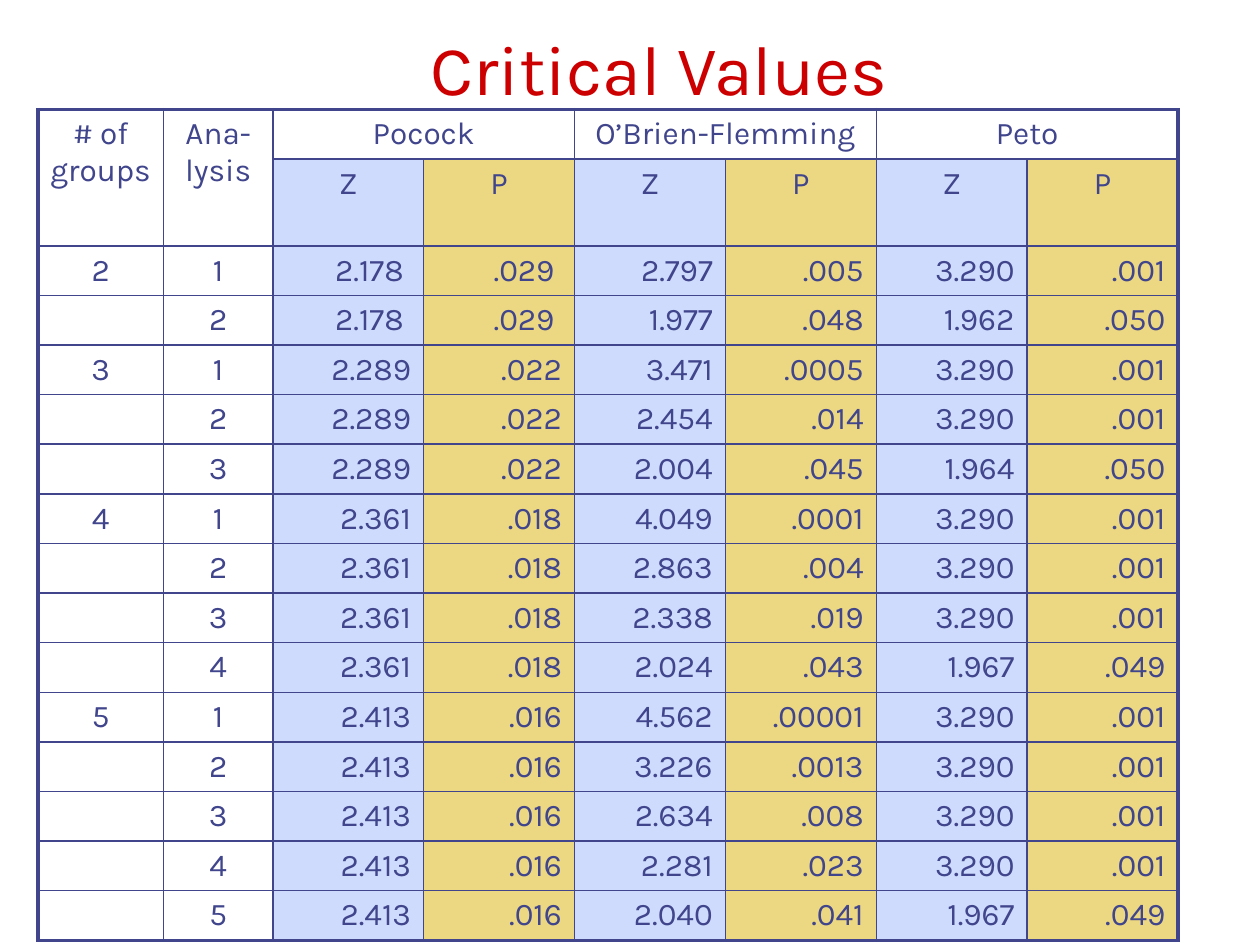
from dataclasses import dataclass

from lxml import etree
from pptx import Presentation
from pptx.dml.color import RGBColor
from pptx.enum.text import MSO_ANCHOR, PP_ALIGN
from pptx.oxml.ns import qn
from pptx.util import Inches, Pt

CENTER, RIGHT = PP_ALIGN.CENTER, PP_ALIGN.RIGHT
BOTTOM = MSO_ANCHOR.BOTTOM
TITLE_ONLY = 5


@dataclass(frozen=True)
class Theme:
    """Colours, font, type sizes and line widths of the slide."""
    font: str = "Karla"
    title: str = "CC0000"
    ink: str = "40458C"
    z_fill: str = "CFDBFD"
    p_fill: str = "ECD882"
    title_size: float = 40
    cell_size: float = 18
    inner_line: float = 1
    outer_line: float = 2.25


THEME = Theme()
COLUMN_WEIGHTS = [1, 0.87] + [1.2] * 6
ROW_PERCENT = 4.38
HEADINGS = {0: "# of groups", 1: "Ana-lysis", 2: "Pocock", 4: "O’Brien-Flemming", 6: "Peto"}
POCOCK = {2: ("2.178 ", ".029 "), 3: ("2.289", ".022"),
          4: ("2.361", ".018"), 5: ("2.413", ".016")}
OBRIEN = {
    2: [("2.797", ".005"), ("1.977", ".048")],
    3: [("3.471", ".0005"), ("2.454", ".014"), ("2.004", ".045")],
    4: [("4.049", ".0001"), ("2.863", ".004"), ("2.338", ".019"), ("2.024", ".043")],
    5: [("4.562", ".00001"), ("3.226", ".0013"), ("2.634", ".008"),
        ("2.281", ".023"), ("2.040", ".041")],
}
PETO = ("3.290", ".001")
PETO_LAST = {2: ("1.962", ".050"), 3: ("1.964", ".050"),
             4: ("1.967", ".049"), 5: ("1.967", ".049")}


def share_box(prs, left, top, width, height):
    """Turn percentages of the slide into a box of lengths."""
    across, down = prs.slide_width / 100, prs.slide_height / 100
    return int(left * across), int(top * down), int(width * across), int(height * down)


def write(frame, text, size, colour, align):
    """Put one run of text into the first paragraph of a frame."""
    paragraph = frame.paragraphs[0]
    paragraph.alignment = align
    run = paragraph.add_run()
    run.text = text
    run.font.name = THEME.font
    run.font.size = Pt(size)
    run.font.color.rgb = RGBColor.from_string(colour)


def add_title(slide, box):
    """Place and format the title placeholder."""
    title = slide.shapes.title
    title.left, title.top, title.width, title.height = box
    title.text_frame.vertical_anchor = BOTTOM
    write(title.text_frame, "Critical Values", THEME.title_size, THEME.title, CENTER)


def set_borders(cell, outer_sides):
    """Draw the four cell borders, heavier on the outer sides."""
    properties = cell._tc.get_or_add_tcPr()
    for side in "LRTB":
        width = THEME.outer_line if side in outer_sides else THEME.inner_line
        line = etree.SubElement(properties, qn(f"a:ln{side}"), w=str(Pt(width)))
        fill = etree.SubElement(line, qn("a:solidFill"))
        etree.SubElement(fill, qn("a:srgbClr"), val=THEME.ink)


def table_rows():
    """Return the texts of all rows, headings first."""
    rows = [[HEADINGS.get(column, "") for column in range(8)], ["", ""] + ["Z", "P"] * 3]
    for groups, pairs in OBRIEN.items():
        for analysis, obrien in enumerate(pairs, 1):
            label = str(groups) if analysis == 1 else ""
            peto = PETO_LAST[groups] if analysis == groups else PETO
            rows.append([label, str(analysis), *POCOCK[groups], *obrien, *peto])
    return rows


def add_values_table(slide, box):
    """Build the table of critical values in the given box."""
    rows = table_rows()
    last_row, last_column = len(rows) - 1, len(COLUMN_WEIGHTS) - 1
    frame = slide.shapes.add_table(len(rows), len(COLUMN_WEIGHTS), *box)
    table = frame.table
    table.first_row = table.horz_banding = False
    for column, weight in zip(table.columns, COLUMN_WEIGHTS):
        column.width = int(box[2] * weight / sum(COLUMN_WEIGHTS))
    for row in table.rows:
        row.height = int(box[3] * ROW_PERCENT / 100)
    frame.height = box[3]

    for r, texts in enumerate(rows):
        for c, text in enumerate(texts):
            cell = table.cell(r, c)
            edges = {"L": c == 0, "R": c == last_column or (r == 0 and c == last_column - 1),
                     "T": r == 0, "B": r == last_row}
            set_borders(cell, [side for side, outer in edges.items() if outer])
            if r and c > 1:
                cell.fill.solid()
                colour = THEME.p_fill if c % 2 else THEME.z_fill
                cell.fill.fore_color.rgb = RGBColor.from_string(colour)
            else:
                cell.fill.background()
            align = RIGHT if r > 1 and c > 1 else CENTER
            write(cell.text_frame, text, THEME.cell_size, THEME.ink, align)

    for c in HEADINGS:
        end = (1, c) if c < 2 else (0, c + 1)
        table.cell(0, c).merge(table.cell(*end))


def main():
    """Build and save the slide."""
    prs = Presentation()
    prs.slide_width, prs.slide_height = Inches(10), Inches(7.5)
    slide = prs.slides.add_slide(prs.slide_layouts[TITLE_ONLY])
    add_title(slide, share_box(prs, 7.3, 0, 90, 12.27))
    add_values_table(slide, share_box(prs, 3, 11.6, 90.5, 85.33))
    prs.save("out.pptx")


if __name__ == "__main__":
    main()
